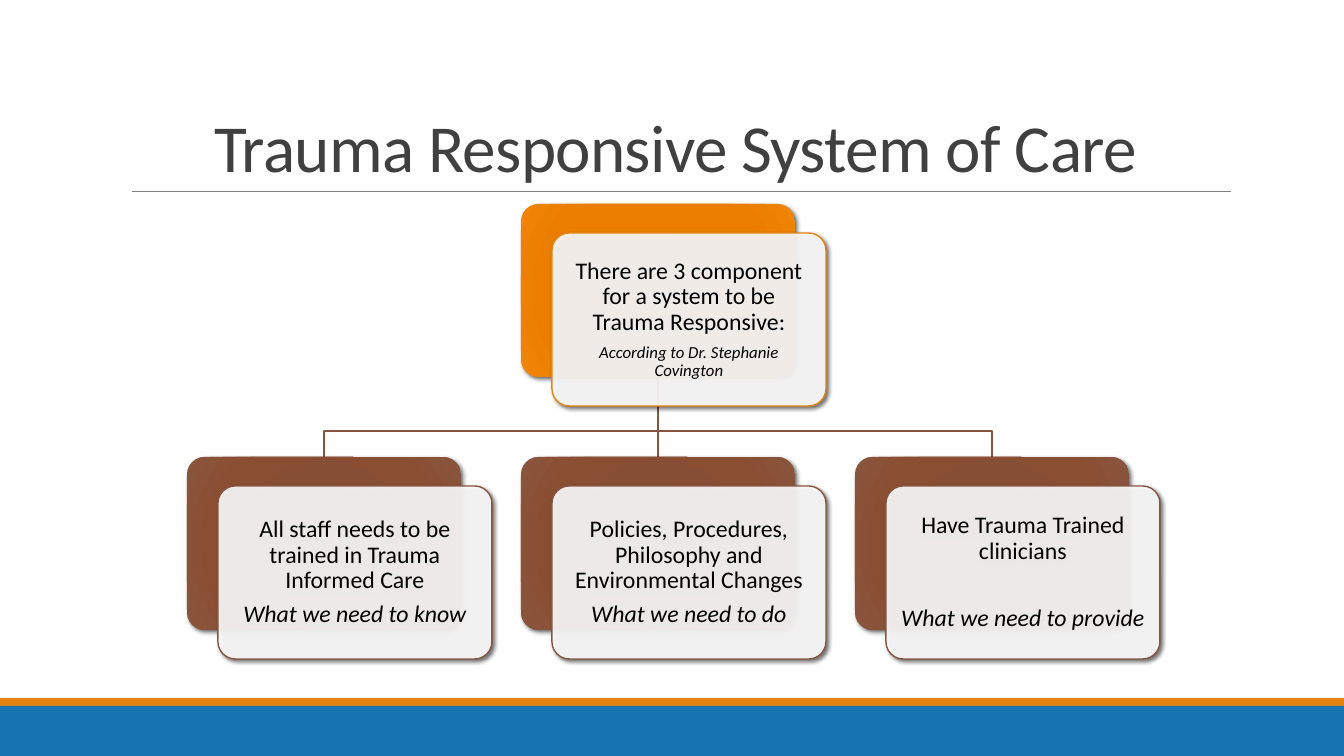
"""Build the slide on the three components of a trauma responsive system of care."""
from dataclasses import dataclass

from pptx import Presentation
from pptx.dml.color import RGBColor
from pptx.enum.shapes import MSO_CONNECTOR, MSO_SHAPE
from pptx.enum.text import MSO_ANCHOR, MSO_AUTO_SIZE, PP_ALIGN
from pptx.oxml import parse_xml
from pptx.oxml.ns import nsdecls, qn
from pptx.oxml.xmlchemy import OxmlElement
from pptx.util import Pt


@dataclass(frozen=True)
class Theme:
    font: str = "Calibri"
    title_size: int = 48
    body_size: int = 17
    source_size: int = 12
    title: str = "404040"
    text: str = "000000"
    rule: str = "808080"
    white: str = "FFFFFF"
    orange: str = "E48312"
    blue: str = "1773B1"
    brown: str = "865640"
    orange_stops: tuple = ((0, "E57B00"), (34, "E87D00"), (70, "EB7E00"), (100, "EF8407"))
    brown_stops: tuple = ((0, "874C32"), (34, "864E34"), (70, "8A4E33"), (100, "8A553D"))


THEME = Theme()
TITLE = "Trauma Responsive System of Care"
ROOT = ("There are 3 component for a system to be Trauma Responsive:",
        "According to Dr. Stephanie Covington")
COMPONENTS = [
    ("All staff needs to be trained in Trauma Informed Care", "What we need to know", 6),
    ("Policies, Procedures, Philosophy and Environmental Changes", "What we need to do", 6),
    ("Have Trauma Trained clinicians", "What we need to provide", 30),
]
BARS = [(698, 8, THEME.orange), (706, 50, THEME.blue)]

SLIDE_WIDTH, SLIDE_HEIGHT = 1344, 756
CARD_WIDTH, CARD_HEIGHT = 274, 173
FRONT_RIGHT, FRONT_DOWN = 31, 29
ROW_LEFT, ROW_TOP, ROW_PITCH = 187, 457, 334
ROOT_LEFT, ROOT_TOP = ROW_LEFT + ROW_PITCH, 204
BEND_TOP = 431
CARD_INSET = 7


def px(length):
    return round(length * 914400 / 100.8)


def color(value):
    return RGBColor.from_string(value)


def add_line(slide, start, end, line_color, width):
    line = slide.shapes.add_connector(
        MSO_CONNECTOR.STRAIGHT, *map(px, start), *map(px, end))
    line.line.color.rgb = color(line_color)
    line.line.width = Pt(width)
    line._element.spPr.append(OxmlElement("a:effectLst"))


def add_box(slide, preset, left, top, width, height):
    box = slide.shapes.add_shape(preset, px(left), px(top), px(width), px(height))
    box.shadow.inherit = False
    box.line.fill.background()
    return box


def add_branch(slide, start, bend_top, end):
    builder = slide.shapes.build_freeform(*map(px, start), scale=1.0)
    corners = [(start[0], bend_top), (end[0], bend_top), end]
    builder.add_line_segments([(px(x), px(y)) for x, y in corners], close=False)
    branch = builder.convert_to_shape()
    branch.shadow.inherit = False
    branch.fill.background()
    branch.line.color.rgb = color(THEME.brown)
    branch.line.width = Pt(1.25)


def add_panel(slide, left, top, blur):
    panel = add_box(slide, MSO_SHAPE.ROUNDED_RECTANGLE, left, top, CARD_WIDTH, CARD_HEIGHT)
    panel.adjustments[0] = 0.1
    panel._element.spPr.find(qn("a:effectLst")).append(parse_xml(
        f'<a:outerShdw {nsdecls("a")} blurRad="{Pt(blur)}" dist="{Pt(2)}" dir="2700000" '
        'algn="br" rotWithShape="0"><a:srgbClr val="000000"><a:alpha val="60000"/>'
        '</a:srgbClr></a:outerShdw>'))
    return panel


def add_card(slide, left, top, stops, outline, lines):
    back = add_panel(slide, left, top, 3.5)
    gradient = "".join(f'<a:gs pos="{position * 1000}"><a:srgbClr val="{value}"/></a:gs>'
                       for position, value in stops)
    back._element.spPr.insert(2, parse_xml(
        f'<a:gradFill {nsdecls("a")} rotWithShape="1"><a:gsLst>{gradient}</a:gsLst>'
        '<a:path path="circle"><a:fillToRect l="100000" t="100000" r="100000" b="100000"/>'
        '</a:path></a:gradFill>'))

    front = add_panel(slide, left + FRONT_RIGHT, top + FRONT_DOWN, 3)
    front.fill.solid()
    front.fill.fore_color.rgb = color(THEME.white)
    alpha = OxmlElement("a:alpha")
    alpha.set("val", "90000")
    front._element.spPr.find(qn("a:solidFill"))[0].append(alpha)
    front.line.color.rgb = color(outline)
    front.line.width = Pt(1)

    frame = front.text_frame
    frame.word_wrap = True
    frame.vertical_anchor = MSO_ANCHOR.MIDDLE
    frame.margin_left = frame.margin_right = px(CARD_INSET)
    frame.margin_top = frame.margin_bottom = px(CARD_INSET)
    for index, (text, size, italic, space_after) in enumerate(lines):
        paragraph = frame.add_paragraph() if index else frame.paragraphs[0]
        paragraph.text = text
        paragraph.alignment = PP_ALIGN.CENTER
        paragraph.line_spacing = 0.9
        paragraph.space_after = Pt(space_after)
        paragraph.font.name = THEME.font
        paragraph.font.size = Pt(size)
        paragraph.font.italic = italic
        paragraph.font.color.rgb = color(THEME.text)


def add_title(slide):
    title = slide.shapes.title
    title.left, title.top, title.width, title.height = map(px, (121, 31, 1109, 160))
    frame = title.text_frame
    frame.text = TITLE
    frame.word_wrap = True
    frame.auto_size = MSO_AUTO_SIZE.NONE
    frame.vertical_anchor = MSO_ANCHOR.BOTTOM
    paragraph = frame.paragraphs[0]
    paragraph.alignment = PP_ALIGN.CENTER
    paragraph.line_spacing = 0.85
    paragraph.font.name = THEME.font
    paragraph.font.size = Pt(THEME.title_size)
    paragraph.font.color.rgb = color(THEME.title)
    paragraph.runs[0].font._element.set("spc", "-50")


def main():
    presentation = Presentation()
    presentation.slide_width, presentation.slide_height = px(SLIDE_WIDTH), px(SLIDE_HEIGHT)
    slide = presentation.slides.add_slide(presentation.slide_layouts[5])
    add_title(slide)
    add_line(slide, (132, 191), (1231, 191), THEME.rule, 0.5)
    for top, height, fill in BARS:
        bar = add_box(slide, MSO_SHAPE.RECTANGLE, 0, top, SLIDE_WIDTH, height)
        bar.fill.solid()
        bar.fill.fore_color.rgb = color(fill)

    stem = (ROOT_LEFT + CARD_WIDTH // 2, ROOT_TOP + CARD_HEIGHT)
    lefts = [ROW_LEFT + index * ROW_PITCH for index in range(len(COMPONENTS))]
    for left in lefts:
        end = (left + CARD_WIDTH // 2, ROW_TOP)
        if end[0] == stem[0]:
            add_line(slide, stem, end, THEME.brown, 1.25)
        else:
            add_branch(slide, stem, BEND_TOP, end)

    statement, source = ROOT
    add_card(slide, ROOT_LEFT, ROOT_TOP, THEME.orange_stops, THEME.orange,
             [(statement, THEME.body_size, False, 6), (source, THEME.source_size, True, 4)])
    for left, (component, need, gap) in zip(lefts, COMPONENTS):
        add_card(slide, left, ROW_TOP, THEME.brown_stops, THEME.brown,
                 [(component, THEME.body_size, False, gap), (need, THEME.body_size, True, 6)])
    presentation.save("out.pptx")


if __name__ == "__main__":
    main()
